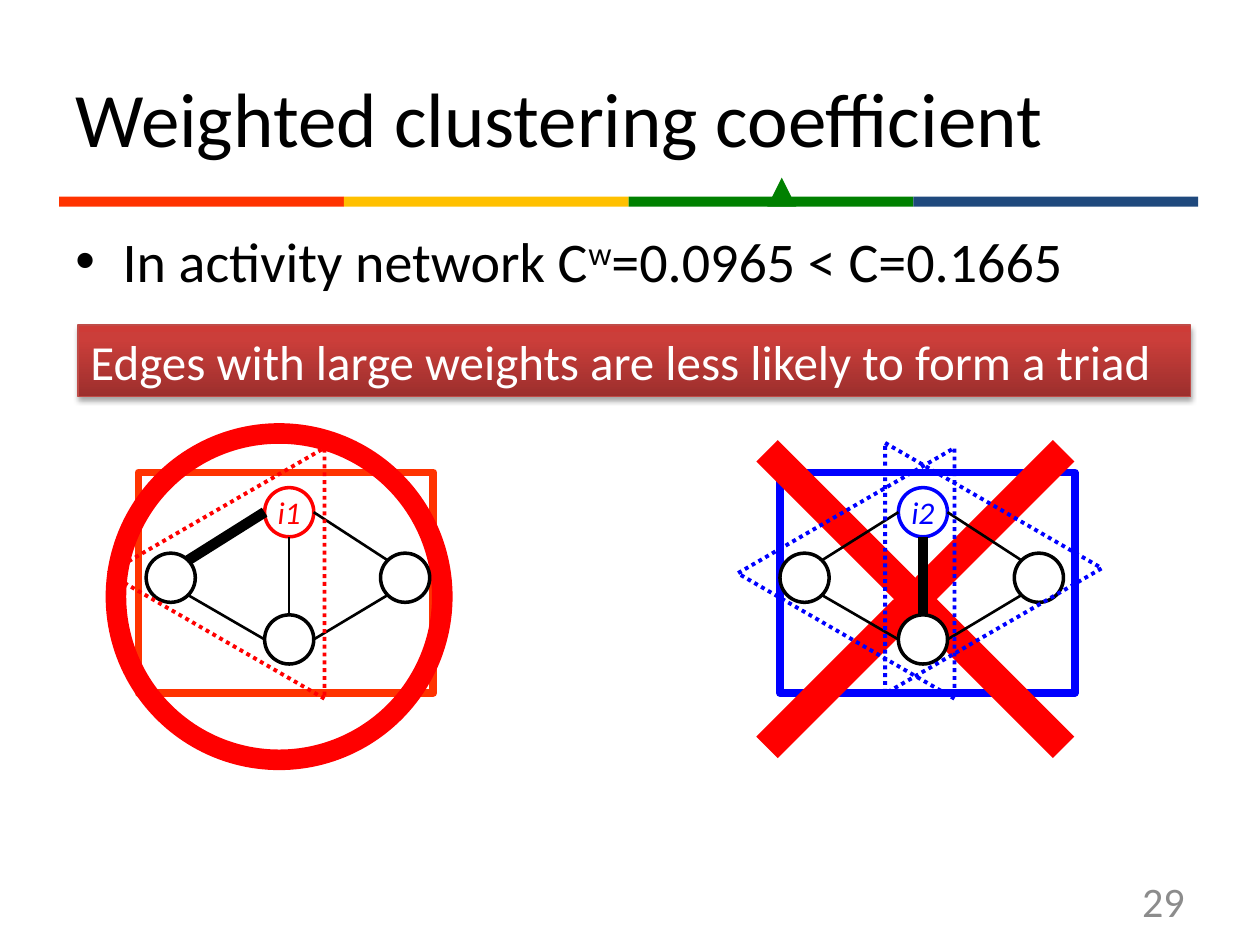
from dataclasses import dataclass

from pptx import Presentation
from pptx.dml.color import RGBColor
from pptx.enum.dml import MSO_LINE
from pptx.enum.shapes import MSO_CONNECTOR, MSO_SHAPE
from pptx.enum.text import MSO_ANCHOR, PP_ALIGN
from pptx.oxml.ns import qn
from pptx.util import Inches, Pt
from lxml.etree import SubElement

SLIDE_WIDTH, SLIDE_HEIGHT = Inches(10), Inches(7.5)
COLUMNS, ROWS = 100, 75
FONT = "Calibri"

BLACK = RGBColor(0x00, 0x00, 0x00)
WHITE = RGBColor(0xFF, 0xFF, 0xFF)
GRAY = RGBColor(0x8C, 0x8C, 0x8C)
RED = RGBColor(0xFF, 0x00, 0x00)
BLUE = RGBColor(0x00, 0x00, 0xFF)
ORANGE = RGBColor(0xFF, 0x33, 0x00)
AMBER = RGBColor(0xFF, 0xC0, 0x00)
GREEN = RGBColor(0x00, 0x80, 0x00)
NAVY = RGBColor(0x1F, 0x49, 0x7D)
BANNER_LINE = RGBColor(0xBF, 0x4C, 0x48)
BANNER_STOPS = (
    (0, RGBColor(0x9C, 0x2F, 0x2D)),
    (80, RGBColor(0xCB, 0x3E, 0x3A)),
    (100, RGBColor(0xCE, 0x3B, 0x37)),
)

NODE_SIZE = 3.9
NODES = {"top": (9.4, 0), "bottom": (9.4, 10.1), "left": (0, 5.2), "right": (18.6, 5.2)}
DIAGONAL = 0.5 ** 0.5
EDGES = {
    "top-left": ("top", (-1, 0), "left", (DIAGONAL, -DIAGONAL)),
    "top-right": ("top", (1, 0), "right", (-DIAGONAL, -DIAGONAL)),
    "bottom-left": ("bottom", (-1, 0), "left", (DIAGONAL, DIAGONAL)),
    "bottom-right": ("bottom", (1, 0), "right", (-DIAGONAL, DIAGONAL)),
    "middle": ("bottom", (0, -1), "top", (0, 1)),
}


@dataclass
class Box:
    column: float
    row: float
    columns: float
    rows: float

    def inner(self, column, row, columns, rows):
        return Box(self.column + column, self.row + row, columns, rows)

    def place(self):
        return (across(self.column), down(self.row), across(self.columns), down(self.rows))


def across(columns):
    return round(SLIDE_WIDTH * columns / COLUMNS)


def down(rows):
    return round(SLIDE_HEIGHT * rows / ROWS)


def add_run(paragraph, text, size, color, italic=None):
    run = paragraph.add_run()
    run.text = text
    run.font.name = FONT
    run.font.size = Pt(size)
    run.font.color.rgb = color
    run.font.italic = italic
    return run


def add_figure(slide, box, kind, fill=None, line=None, weight=1):
    shape = slide.shapes.add_shape(kind, *box.place())
    shape.shadow.inherit = False
    if fill is None:
        shape.fill.background()
    else:
        shape.fill.solid()
        shape.fill.fore_color.rgb = fill
    if line is None:
        shape.line.fill.background()
    else:
        shape.line.color.rgb = line
        shape.line.width = Pt(weight)
    return shape


def add_text_box(slide, box, anchor):
    frame = slide.shapes.add_textbox(*box.place()).text_frame
    frame.word_wrap = True
    frame.vertical_anchor = anchor
    return frame.paragraphs[0]


def add_title(slide, box):
    paragraph = add_text_box(slide, box, MSO_ANCHOR.MIDDLE)
    add_run(paragraph, "Weighted clustering coefficient", 44, BLACK)


def add_page_number(slide, box):
    paragraph = add_text_box(slide, box, MSO_ANCHOR.MIDDLE)
    paragraph.alignment = PP_ALIGN.RIGHT
    add_run(paragraph, "29", 24, GRAY)


def add_color_bar(slide, box):
    add_figure(slide, box.inner(56.2, -1.5, 2.3, 2.3), MSO_SHAPE.FLOWCHART_EXTRACT, GREEN)
    width = box.columns / 4
    for index, color in enumerate((ORANGE, AMBER, GREEN, NAVY)):
        add_figure(slide, box.inner(index * width, 0, width, box.rows), MSO_SHAPE.RECTANGLE, color)


def add_finding(slide, box):
    paragraph = add_text_box(slide, box, MSO_ANCHOR.TOP)
    paragraph.space_before = Pt(6.4)
    properties = paragraph._p.get_or_add_pPr()
    properties.set("marL", str(across(3.75)))
    properties.set("indent", str(-across(3.75)))
    SubElement(properties, qn("a:buFont"), typeface="Arial")
    SubElement(properties, qn("a:buChar"), char="•")
    add_run(paragraph, "In activity network C", 32, BLACK)
    exponent = add_run(paragraph, "w", 32, BLACK)
    exponent.font._element.set("baseline", "30000")
    add_run(paragraph, "=0.0965 < C=0.1665", 32, BLACK)


def add_banner(slide, box):
    shape = add_figure(slide, box, MSO_SHAPE.RECTANGLE, line=BANNER_LINE, weight=0.75)
    shape.fill.gradient()
    shape.fill.gradient_angle = 90
    properties = shape._element.spPr
    stops = properties.find(".//" + qn("a:gsLst"))
    for stop in list(stops):
        stops.remove(stop)
    for position, color in BANNER_STOPS:
        stop = SubElement(stops, qn("a:gs"), pos=str(position * 1000))
        SubElement(stop, qn("a:srgbClr"), val=str(color))
    shadow = SubElement(
        properties.find(qn("a:effectLst")), qn("a:outerShdw"),
        blurRad=str(Pt(3.1)), dist=str(Pt(1.8)), dir="5400000", rotWithShape="0",
    )
    shadow_color = SubElement(shadow, qn("a:srgbClr"), val=str(BLACK))
    SubElement(shadow_color, qn("a:alpha"), val="35000")
    frame = shape.text_frame
    frame.word_wrap = True
    frame.vertical_anchor = MSO_ANCHOR.TOP
    paragraph = frame.paragraphs[0]
    paragraph.alignment = PP_ALIGN.LEFT
    add_run(paragraph, "Edges with large weights are less likely to form a triad", 28, WHITE)


def add_edge(slide, box, edge, weight):
    start, start_side, end, end_side = EDGES[edge]
    points = []
    for node, side in ((start, start_side), (end, end_side)):
        column, row = NODES[node]
        points.append(across(box.column + column + NODE_SIZE / 2 * (1 + side[0])))
        points.append(down(box.row + row + NODE_SIZE / 2 * (1 + side[1])))
    connector = slide.shapes.add_connector(MSO_CONNECTOR.STRAIGHT, *points)
    connector.line.color.rgb = BLACK
    connector.line.width = Pt(weight)
    SubElement(connector._element.spPr, qn("a:effectLst"))


def add_network(slide, box, label, color, heavy_edge, triangles):
    for name, (column, row) in NODES.items():
        outline = color if name == "top" else BLACK
        node = add_figure(slide, box.inner(column, row, NODE_SIZE, NODE_SIZE), MSO_SHAPE.OVAL, WHITE, outline, 2)
        if name == "top":
            frame = node.text_frame
            frame.word_wrap = False
            frame.vertical_anchor = MSO_ANCHOR.MIDDLE
            frame.paragraphs[0].alignment = PP_ALIGN.CENTER
            add_run(frame.paragraphs[0], label, 18, color, italic=True)
    for edge in EDGES:
        add_edge(slide, box, edge, 6 if edge == heavy_edge else 1.5)
    for column, row, rotation in triangles:
        triangle = add_figure(
            slide, box.inner(column, row, 19.9, 17.2), MSO_SHAPE.ISOSCELES_TRIANGLE, line=color, weight=2.25)
        triangle.line.dash_style = MSO_LINE.ROUND_DOT
        triangle.rotation = rotation


def add_likely_case(slide, box):
    add_figure(slide, box.inner(1.8, 3.1, 23.4, 17.5), MSO_SHAPE.RECTANGLE, line=ORANGE, weight=4.5)
    add_figure(slide, box, MSO_SHAPE.OVAL, line=RED, weight=11.75)
    add_network(slide, box.inner(2.4, 4.3, 22.5, 14), "i1", RED, "top-left", [(-4.4, -1.8, 270)])


def add_unlikely_case(slide, box):
    add_figure(slide, box.inner(11.9, 12.6, 23.4, 17.5), MSO_SHAPE.RECTANGLE, line=BLUE, weight=4.5)
    cross = add_figure(slide, box, MSO_SHAPE.MATH_MULTIPLY, RED)
    cross.adjustments[0] = 0.053
    add_network(
        slide, box.inner(11.9, 13.8, 22.5, 14), "i2", BLUE, "middle", [(-4.7, -1.8, 270), (7, -2.2, 90)])


def main():
    presentation = Presentation()
    presentation.slide_width, presentation.slide_height = SLIDE_WIDTH, SLIDE_HEIGHT
    slide = presentation.slides.add_slide(presentation.slide_layouts[6])
    add_title(slide, Box(5, 3, 90, 12.5))
    add_page_number(slide, Box(71.7, 69.5, 23.3, 4))
    add_color_bar(slide, Box(4.7, 15.6, 90.4, 0.8))
    add_finding(slide, Box(5, 17.5, 90, 49.5))
    add_banner(slide, Box(6.2, 25.8, 88.3, 5.7))
    add_likely_case(slide, Box(9.2, 34.4, 25.9, 25.9))
    add_unlikely_case(slide, Box(50, 24.9, 45.3, 45.3))
    presentation.save("out.pptx")


if __name__ == "__main__":
    main()
